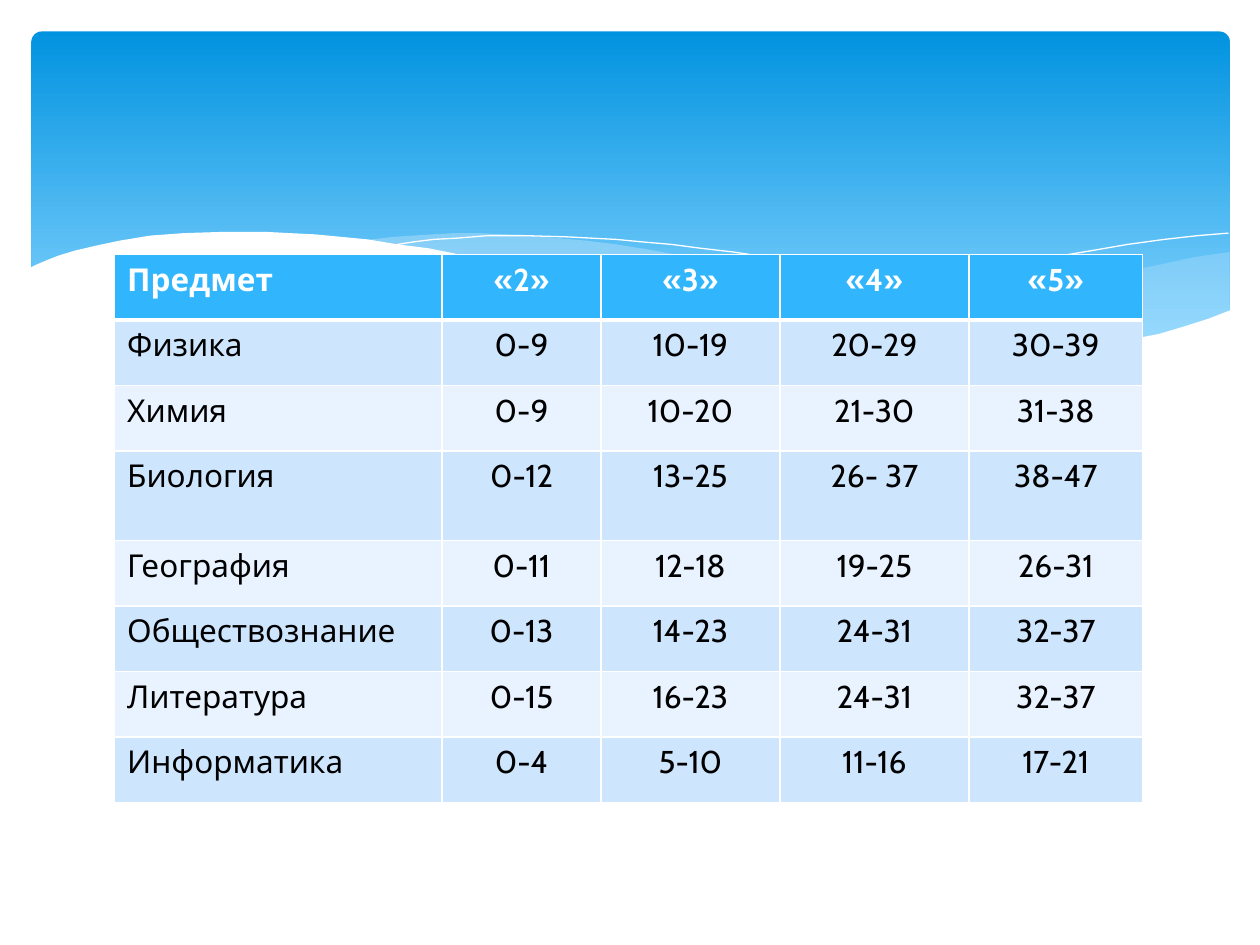
from dataclasses import dataclass

from lxml.etree import SubElement
from pptx import Presentation
from pptx.dml.color import RGBColor
from pptx.enum.shapes import MSO_SHAPE
from pptx.enum.text import PP_ALIGN
from pptx.oxml.ns import qn
from pptx.util import Inches, Pt


@dataclass(frozen=True)
class Theme:
    font: str = "Cabin"
    size: int = 18
    white: str = "FFFFFF"
    ink: str = "000000"
    deep: str = "0293E0"
    sky: str = "83D3FE"
    mist: str = "C6E7FC"
    head: str = "31B6FD"
    odd: str = "CEE5FE"
    even: str = "E8F3FF"
    thin: int = 1
    thick: int = 3


class Deck:
    def __init__(self, theme):
        self.theme = theme
        self.file = Presentation()
        self.file.slide_width = Inches(10)
        self.file.slide_height = Inches(7.5)
        self.slide = self.file.slides.add_slide(self.file.slide_layouts[6])
        back = self.slide.background.fill
        back.solid()
        back.fore_color.rgb = RGBColor.from_string(theme.white)

    def panel(self, left, top, width, height):
        shape = self.slide.shapes.add_shape(
            MSO_SHAPE.ROUNDED_RECTANGLE,
            Inches(left), Inches(top), Inches(width), Inches(height))
        shape.adjustments[0] = 0.03
        shape.shadow.inherit = False
        shape.line.fill.background()
        shape.fill.gradient()
        shape.fill.gradient_angle = 270
        stops = shape.fill.gradient_stops
        for stop, place, color in zip(
                stops, (0, 0.9), (self.theme.deep, self.theme.sky)):
            stop.position = place
            stop.color.rgb = RGBColor.from_string(color)

    def trace(self, points, close):
        spots = [(Inches(x), Inches(y)) for x, y in points]
        pen = self.slide.shapes.build_freeform(*spots[0])
        pen.add_line_segments(spots[1:], close=close)
        shape = pen.convert_to_shape()
        shape.shadow.inherit = False
        return shape

    def wave(self, points, color, alpha=100):
        shape = self.trace(points, True)
        shape.line.fill.background()
        shape.fill.solid()
        shape.fill.fore_color.rgb = RGBColor.from_string(color)
        if alpha < 100:
            tint = shape.fill._xPr.find(qn("a:solidFill"))[0]
            SubElement(tint, qn("a:alpha"), val=str(alpha * 1000))

    def curve(self, points):
        shape = self.trace(points, False)
        shape.fill.background()
        shape.line.color.rgb = RGBColor.from_string(self.theme.white)
        shape.line.width = Pt(0)

    def border(self, cell, side, width):
        line = SubElement(cell._tc.get_or_add_tcPr(), qn("a:ln" + side),
                          w=str(Pt(width)))
        fill = SubElement(line, qn("a:solidFill"))
        SubElement(fill, qn("a:srgbClr"), val=self.theme.white)

    def cell(self, cell, text, row, col):
        theme = self.theme
        for side in "LRTB":
            heavy = (row, side) in ((0, "B"), (1, "T"))
            self.border(cell, side, theme.thick if heavy else theme.thin)
        band = theme.odd if row % 2 else theme.even
        cell.fill.solid()
        cell.fill.fore_color.rgb = RGBColor.from_string(
            band if row else theme.head)
        cell.text_frame.text = text
        para = cell.text_frame.paragraphs[0]
        para.alignment = PP_ALIGN.CENTER if col else PP_ALIGN.LEFT
        font = para.runs[0].font
        font.name = theme.font
        font.size = Pt(theme.size)
        font.bold = row == 0
        font.color.rgb = RGBColor.from_string(
            theme.ink if row else theme.white)

    def table(self, left, top, cols, rows, data):
        table = self.slide.shapes.add_table(
            len(rows), len(cols), Inches(left), Inches(top),
            Inches(sum(cols)), Inches(sum(rows))).table
        table.horz_banding = False
        for col, width in enumerate(cols):
            table.columns[col].width = Inches(width)
        for row, height in enumerate(rows):
            table.rows[row].height = Inches(height)
            for col, text in enumerate(data[row]):
                self.cell(table.cell(row, col), text, row, col)

    def save(self):
        self.file.save("out.pptx")


RIGHT = [
    (9.76, 2), (9.48, 2.04), (9.21, 2.1), (8.91, 2.16), (8.61, 2.23),
    (8.05, 2.37), (7.53, 2.48), (7.06, 2.57), (6.61, 2.65), (6.91, 2.69),
    (7.19, 2.72), (7.45, 2.75), (7.69, 2.77), (8.03, 2.78), (8.35, 2.77),
    (8.63, 2.75), (8.89, 2.72), (9.13, 2.67), (9.35, 2.62), (9.49, 2.57),
    (9.63, 2.52), (9.76, 2.47)]
MIDDLE = [
    (8.93, 2.73), (8.66, 2.69), (8.37, 2.65), (8.07, 2.6), (7.75, 2.54),
    (7.41, 2.47), (7.06, 2.4), (6.68, 2.31), (6.29, 2.22), (5.98, 2.14),
    (5.69, 2.08), (5.41, 2.03), (5.14, 1.98), (4.89, 1.94), (4.65, 1.91),
    (4.42, 1.89), (4.2, 1.87), (3.99, 1.86), (3.8, 1.85), (3.61, 1.85),
    (3.44, 1.86), (3.13, 1.88), (2.86, 1.91), (3.23, 1.96), (3.62, 2.03),
    (4.04, 2.11), (4.49, 2.22), (4.91, 2.32), (5.3, 2.4), (5.66, 2.48),
    (6.01, 2.55), (6.34, 2.61), (6.65, 2.66), (6.95, 2.7), (7.22, 2.74),
    (7.48, 2.76), (7.85, 2.78), (8.28, 2.78), (8.57, 2.77), (8.76, 2.75)]
LONG = [
    (3.09, 1.95), (3.28, 1.92), (3.44, 1.9), (3.63, 1.89), (3.87, 1.87),
    (4.16, 1.87), (4.5, 1.88), (4.69, 1.89), (4.89, 1.9), (5.1, 1.92),
    (5.33, 1.94), (5.56, 1.97), (5.82, 2), (6.08, 2.04), (6.36, 2.08),
    (6.65, 2.13), (6.95, 2.19), (7.27, 2.26), (7.6, 2.33), (7.95, 2.41),
    (8.31, 2.51), (8.69, 2.61), (9.07, 2.72)]
SHORT = [
    (6.13, 2.57), (6.53, 2.46), (6.95, 2.35), (7.2, 2.29), (7.48, 2.23),
    (7.76, 2.16), (8.06, 2.1), (8.36, 2.04), (8.66, 1.99), (8.95, 1.94),
    (9.24, 1.9), (9.51, 1.87), (9.75, 1.85)]
FRONT = [
    (9.77, 2.46), (9.59, 2.53), (9.4, 2.59), (9.2, 2.65), (8.99, 2.69),
    (8.75, 2.73), (8.5, 2.75), (8.23, 2.77), (7.93, 2.76), (7.61, 2.75),
    (7.26, 2.72), (6.88, 2.68), (6.48, 2.62), (6.03, 2.54), (5.55, 2.45),
    (5.03, 2.33), (4.47, 2.2), (4.18, 2.13), (3.91, 2.07), (3.65, 2.02),
    (3.4, 1.97), (3.16, 1.94), (2.92, 1.9), (2.71, 1.88), (2.5, 1.86),
    (2.3, 1.85), (2.11, 1.84), (1.77, 1.84), (1.46, 1.85), (1.19, 1.87),
    (0.95, 1.91), (0.76, 1.95), (0.59, 1.99), (0.46, 2.03), (0.36, 2.07),
    (0.29, 2.1), (0.23, 2.13), (0.23, 3.29), (9.77, 3.29)]

COLS = [2.6, 1.26, 1.42, 1.5, 1.38]
ROWS = [0.52] * 3 + [0.71] + [0.52] * 4
MARKS = [
    ("Предмет", "«2»", "«3»", "«4»", "«5»"),
    ("Физика", "0-9", "10-19", "20-29", "30-39"),
    ("Химия", "0-9", "10-20", "21-30", "31-38"),
    ("Биология", "0-12", "13-25", "26- 37", "38-47"),
    ("География", "0-11", "12-18", "19-25", "26-31"),
    ("Обществознание", "0-13", "14-23", "24-31", "32-37"),
    ("Литература", "0-15", "16-23", "24-31", "32-37"),
    ("Информатика", "0-4", "5-10", "11-16", "17-21")]


def main():
    theme = Theme()
    deck = Deck(theme)
    deck.panel(0.25, 0.25, 9.51, 2.7)
    deck.wave(RIGHT, theme.mist, 29)
    deck.wave(MIDDLE, theme.mist, 40)
    deck.curve(LONG)
    deck.curve(SHORT)
    deck.wave(FRONT, theme.white)
    deck.table(0.91, 2.02, COLS, ROWS, MARKS)
    deck.save()


if __name__ == "__main__":
    main()
